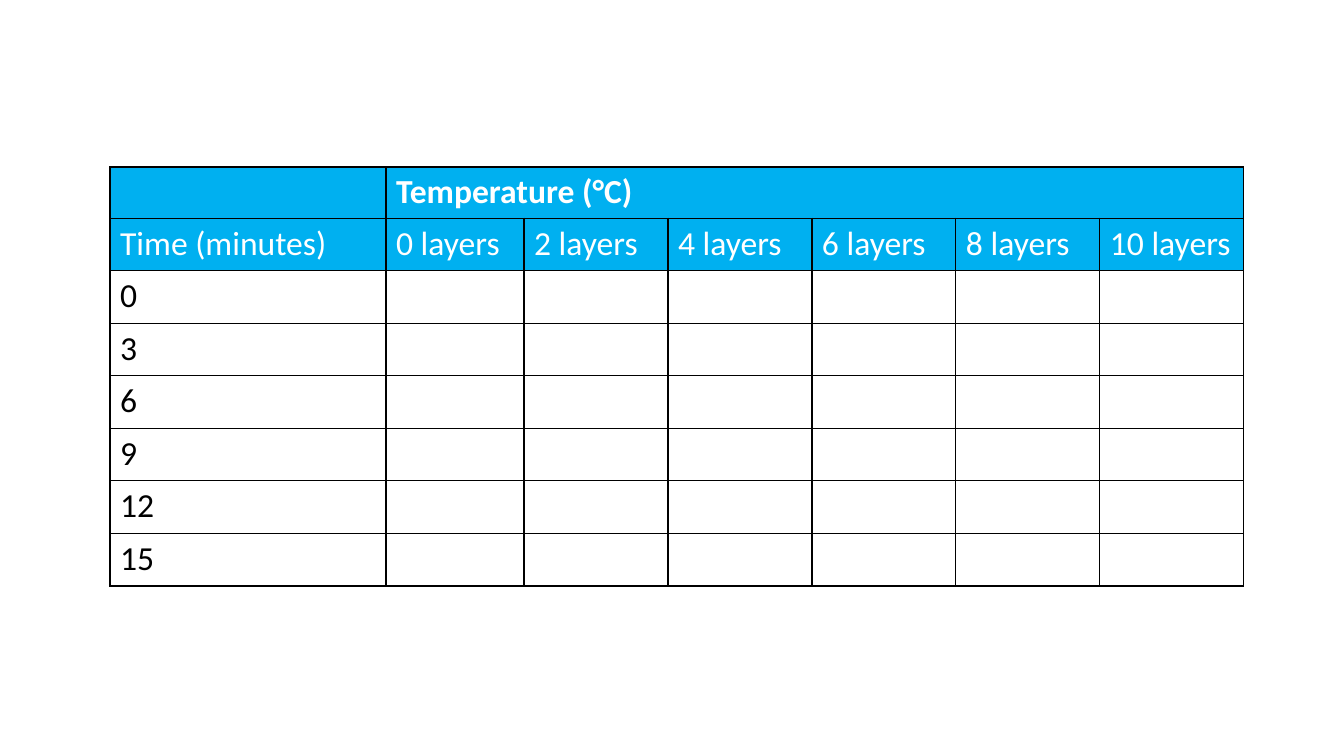
from dataclasses import dataclass

from lxml import etree
from pptx import Presentation
from pptx.dml.color import RGBColor
from pptx.oxml.ns import qn
from pptx.util import Pt

QUANTITY = "Temperature (°C)"
TIME_LABEL = "Time (minutes)"
LAYERS = [0, 2, 4, 6, 8, 10]
MINUTES = [0, 3, 6, 9, 12, 15]

PX = 914400 / 100.8
SLIDE_WIDTH, SLIDE_HEIGHT = 1344, 756
LEFT, TOP = 110, 167
COLUMN_WIDTHS = [276, 138] + [144] * 5
QUANTITY_HEIGHT, READINGS_HEIGHT = 51, 368


@dataclass(frozen=True)
class Theme:
    font: str = "Calibri"
    size: int = 24
    header_fill: str = "00B0F0"
    header_text: str = "FFFFFF"
    body_text: str = "000000"
    border: str = "000000"
    border_width: int = 1


THEME = Theme()


def emu(px):
    return round(px * PX)


def add_borders(cell):
    properties = cell._tc.get_or_add_tcPr()
    for side in ("lnL", "lnR", "lnT", "lnB"):
        line = etree.SubElement(properties, qn(f"a:{side}"), w=str(Pt(THEME.border_width)))
        fill = etree.SubElement(line, qn("a:solidFill"))
        etree.SubElement(fill, qn("a:srgbClr"), val=THEME.border)


def style_cell(cell, text, is_header, bold):
    add_borders(cell)
    if is_header:
        cell.fill.solid()
        cell.fill.fore_color.rgb = RGBColor.from_string(THEME.header_fill)
    else:
        cell.fill.background()
    if not text:
        return
    cell.text_frame.text = text
    font = cell.text_frame.paragraphs[0].runs[0].font
    font.name = THEME.font
    font.size = Pt(THEME.size)
    font.bold = bold
    color = THEME.header_text if is_header else THEME.body_text
    font.color.rgb = RGBColor.from_string(color)


def add_readings_table(slide):
    blanks = [""] * len(LAYERS)
    rows = [
        ["", QUANTITY] + blanks[1:],
        [TIME_LABEL] + [f"{count} layers" for count in LAYERS],
    ] + [[str(minute)] + blanks for minute in MINUTES]

    readings = slide.shapes.add_table(
        len(rows), len(COLUMN_WIDTHS), emu(LEFT), emu(TOP),
        emu(sum(COLUMN_WIDTHS)), emu(QUANTITY_HEIGHT + READINGS_HEIGHT),
    ).table
    readings.first_row = False
    readings.horz_banding = False

    for column, width in zip(readings.columns, COLUMN_WIDTHS):
        column.width = emu(width)
    for index, row in enumerate(readings.rows):
        row.height = emu(READINGS_HEIGHT / (len(rows) - 1) if index else QUANTITY_HEIGHT)

    readings.cell(0, 1).merge(readings.cell(0, len(LAYERS)))
    for r, texts in enumerate(rows):
        for c, text in enumerate(texts):
            style_cell(readings.cell(r, c), text, is_header=r < 2, bold=r == 0)


def main():
    deck = Presentation()
    deck.slide_width, deck.slide_height = emu(SLIDE_WIDTH), emu(SLIDE_HEIGHT)
    slide = deck.slides.add_slide(deck.slide_layouts[6])
    add_readings_table(slide)
    deck.save("out.pptx")


if __name__ == "__main__":
    main()
